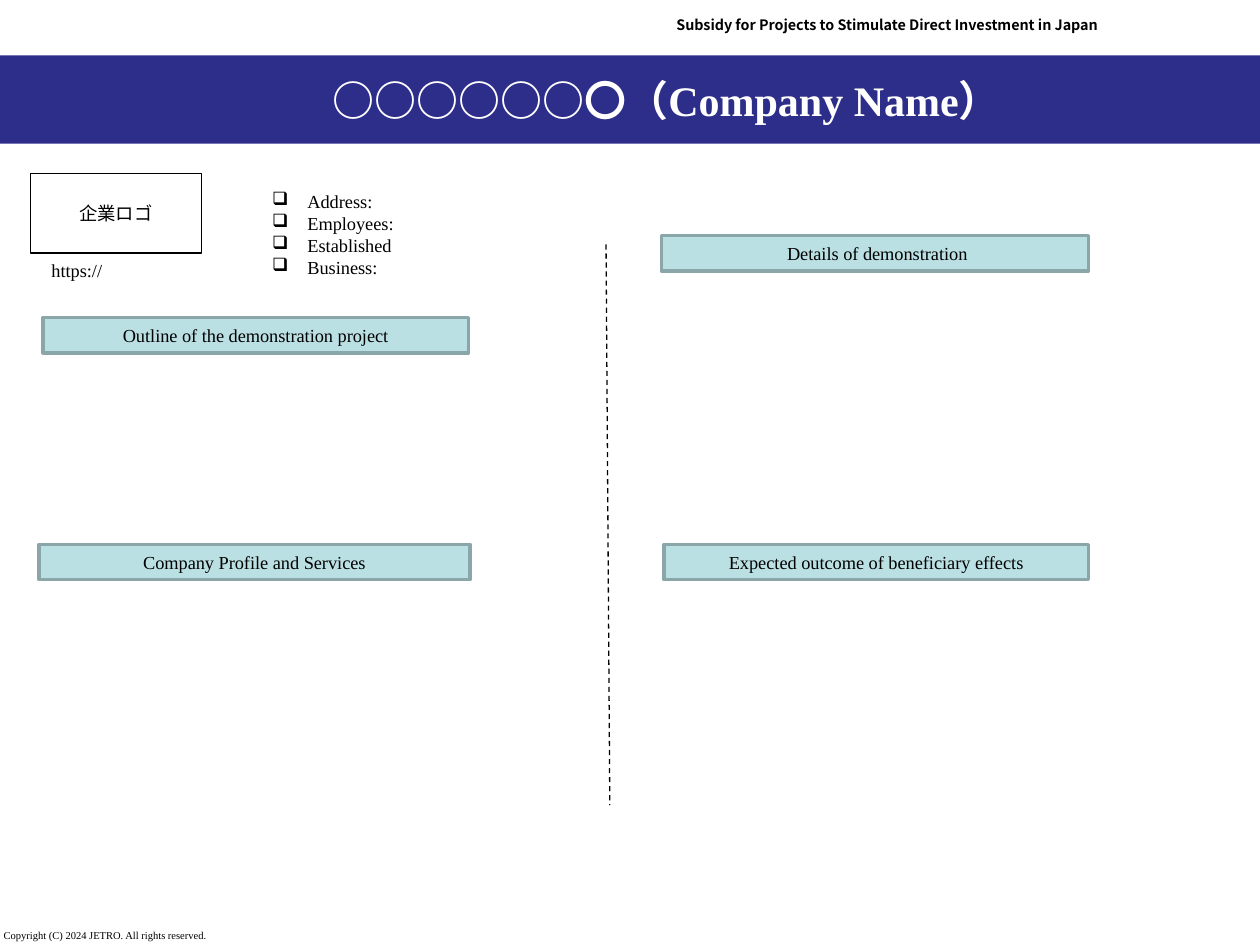
import dataclasses

import lxml.etree
import pptx
import pptx.dml.color
import pptx.enum.dml
import pptx.enum.shapes
import pptx.enum.text
import pptx.oxml.ns
import pptx.util
from pptx.util import Inches


@dataclasses.dataclass(frozen=True)
class Theme:
    serif: str = "Times New Roman"
    gothic: str = "Noto Sans CJK JP"
    black: str = "000000"
    white: str = "FFFFFF"
    navy: str = "2D2D8A"
    aqua: str = "BBE0E3"
    teal: str = "8AA6A8"
    title: float = 24
    body: float = 10.5
    header: float = 8.2
    footer: float = 6


theme = Theme()
qn = pptx.oxml.ns.qn
color = pptx.dml.color.RGBColor.from_string
align = pptx.enum.text.PP_ALIGN
anchor = pptx.enum.text.MSO_ANCHOR


def write(box, lines, size=theme.body, ink=theme.black, bold=False,
          center=False, bullet=None, **frame_format):
    """Fill a box with lines, each a list of (text, font name) spans."""
    frame = box.text_frame
    for name, value in ({"word_wrap": True} | frame_format).items():
        setattr(frame, name, value)
    for number, spans in enumerate(lines):
        para = frame.add_paragraph() if number else frame.paragraphs[0]
        para.alignment = align.CENTER if center else align.LEFT
        if bullet:
            properties = para._p.get_or_add_pPr()
            properties.set("marL", str(Inches(0.28)))
            properties.set("indent", str(Inches(-0.28)))
            lxml.etree.SubElement(properties, qn("a:buChar")).set("char", bullet)
        for text, face in spans:
            span = para.add_run()
            span.text = text
            span.font.color.rgb = color(ink)
            font_format = {"name": face, "size": pptx.util.Pt(size), "bold": bold}
            for name, value in font_format.items():
                setattr(span.font, name, value)
            east_asian = lxml.etree.SubElement(span._r.rPr, qn("a:ea"))
            east_asian.set("typeface", theme.gothic)


def add_panel(place, fill=None, line=None, width=0.75):
    """Add a flat rectangle; place is left, top, width, height in inches."""
    panel = page.shapes.add_shape(
        pptx.enum.shapes.MSO_SHAPE.RECTANGLE, *map(Inches, place))
    panel.shadow.inherit = False
    for part, shade in ((panel.fill, fill), (panel.line.fill, line)):
        if shade:
            part.solid()
            part.fore_color.rgb = color(shade)
        else:
            part.background()
    if line:
        panel.line.width = pptx.util.Pt(width)
    return panel


deck = pptx.Presentation()
deck.slide_width, deck.slide_height = Inches(10), Inches(7.5)
page = deck.slides.add_slide(deck.slide_layouts[6])

# Title band
add_panel((0, 0.44, 10, 0.7), fill=theme.navy)

# Free text: title, company facts, header, web address, copyright
margins = ("margin_left", "margin_top", "margin_right", "margin_bottom")
facts = ["Address:", "Employees:", "Established", "Business:"]
texts = [
    ((2.03, 0.53, 6.52, 0.52),
     [[("○○○○○○〇（", theme.gothic), ("Company Name）", theme.serif)]],
     {"size": theme.title, "ink": theme.white, "bold": True, "center": True,
      "vertical_anchor": anchor.MIDDLE}),
    ((2.09, 1.47, 2.35, 0.78),
     [[(fact, theme.serif)] for fact in facts],
     {"bullet": "❑"} | dict(zip(margins, map(Inches, (0.07, 0.04, 0.07, 0.04))))),
    ((5.27, 0.08, 3.93, 0.24),
     [[("Subsidy for Projects to Stimulate Direct Investment in Japan",
        theme.gothic)]],
     {"size": theme.header, "bold": True, "word_wrap": False}),
    ((0.31, 2.01, 0.61, 0.45), [[("https://", theme.serif)]],
     {"word_wrap": False}),
    ((0, 7.25, 3.17, 0.25),
     [[("Copyright (C) 2024 JETRO. All rights reserved.", theme.serif)]],
     {"size": theme.footer, "vertical_anchor": anchor.BOTTOM}
     | dict.fromkeys(margins, Inches(0.03))),
]
for place, lines, text_format in texts:
    box = page.shapes.add_textbox(*map(Inches, place))
    write(box, lines, **text_format)

# Section headings
headings = [
    (0.34, 2.52, 3.38, "Outline of the demonstration project"),
    (5.25, 1.87, 3.39, " Details of demonstration"),
    (0.31, 4.32, 3.42, "Company Profile and Services"),
    (5.27, 4.32, 3.37, "Expected outcome of beneficiary effects"),
]
for left, top, width, heading in headings:
    panel = add_panel((left, top, width, 0.28), theme.aqua, theme.teal, 2)
    write(panel, [[(heading, theme.serif)]], center=True,
          vertical_anchor=anchor.MIDDLE)

# Logo placeholder
logo = add_panel((0.24, 1.38, 1.36, 0.63), line=theme.black)
write(logo, [[("企業ロゴ", theme.gothic)]], center=True,
      vertical_anchor=anchor.MIDDLE)

# Dashed divider between the columns
divider = page.shapes.add_connector(
    pptx.enum.shapes.MSO_CONNECTOR.STRAIGHT,
    *map(Inches, (4.81, 1.94, 4.84, 6.39)))
divider.line.color.rgb = color(theme.black)
divider.line.width = pptx.util.Pt(0.75)
divider.line.dash_style = pptx.enum.dml.MSO_LINE.DASH
lxml.etree.SubElement(divider._element.spPr, qn("a:effectLst"))

deck.save("out.pptx")
